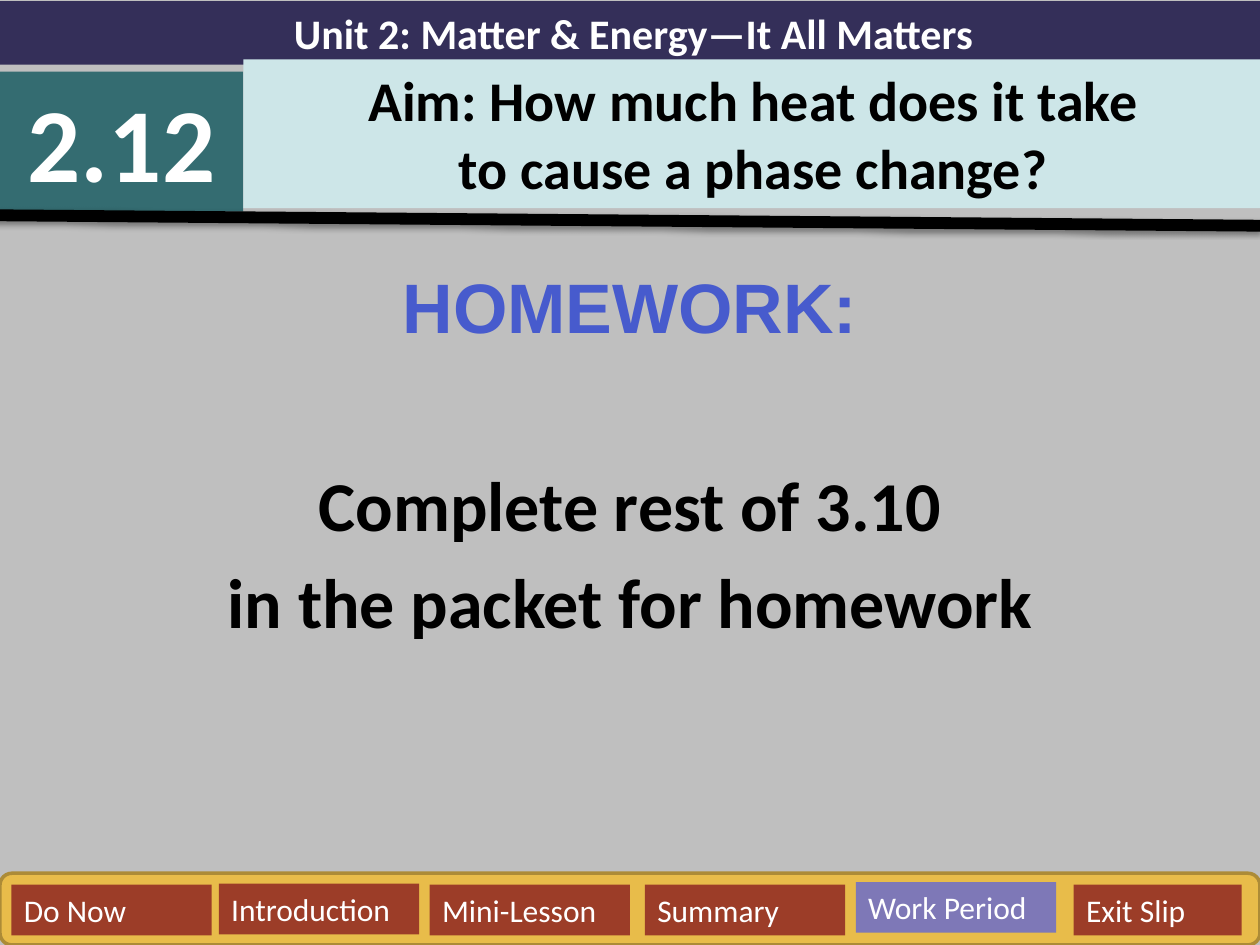
from pptx import Presentation
from pptx.dml.color import RGBColor
from pptx.enum.shapes import MSO_CONNECTOR as Connector, MSO_SHAPE as Shape
from pptx.enum.text import MSO_ANCHOR as Anchor, MSO_AUTO_SIZE as AutoSize, PP_ALIGN as Align
from pptx.oxml import parse_xml
from pptx.oxml.ns import nsdecls
from pptx.util import Pt


def color(hex_string):
    return RGBColor.from_string(hex_string)


class LessonSlide:
    """Holds the style and the current slide; every length is in points."""
    FONT = "Calibri"
    BLACK, WHITE = "000000", "FFFFFF"
    GRAY, PURPLE, TEAL, PALE = "BFBFBF", "342F59", "346C71", "CDE6E8"
    GOLD, GOLD_EDGE, RED, VIOLET, BLUE = "E8BC4A", "AC8B37", "9C3D28", "7E78B7", "475BCD"

    def __init__(self, presentation):
        self.slide = presentation.slides.add_slide(presentation.slide_layouts[0])
        self.shapes = self.slide.shapes
        self.paint(self.slide.background, self.GRAY)

    def paint(self, target, fill):
        target.fill.solid()
        target.fill.fore_color.rgb = color(fill)

    def place(self, shape, box):
        for name, value in zip(("left", "top", "width", "height"), box):
            setattr(shape, name, Pt(value))

    def set_text(self, shape, lines, size, ink, bold=True, align=Align.CENTER):
        frame = shape.text_frame
        frame.text = "\n".join(lines)
        frame_format = {"word_wrap": True, "auto_size": AutoSize.NONE,
                        "vertical_anchor": Anchor.TOP}
        for name, value in frame_format.items():
            setattr(frame, name, value)
        font_format = {"name": self.FONT, "size": Pt(size), "bold": bold}
        for paragraph in frame.paragraphs:
            paragraph.alignment = align
            for run in paragraph.runs:
                for name, value in font_format.items():
                    setattr(run.font, name, value)
                run.font.color.rgb = color(ink)
        return frame.paragraphs

    def panel(self, box, fill, kind=Shape.RECTANGLE, edge=None):
        shape = self.shapes.add_shape(kind, *map(Pt, box))
        shape.shadow.inherit = False
        self.paint(shape, fill)
        if edge:
            shape.line.color.rgb = color(edge)
            shape.line.width = Pt(2)
        else:
            shape.line.fill.background()
        return shape

    def title(self, box, lines):
        title = self.shapes.title
        self.place(title, box)
        self.paint(title, self.PALE)
        for paragraph in self.set_text(title, lines, 32, self.BLACK):
            paragraph.space_before = Pt(0)
        # The aim lies above the unit bar
        title.element.getparent().append(title.element)

    def homework(self, box, heading, lines):
        body = self.slide.placeholders[1]
        self.place(body, box)
        paragraphs = self.set_text(body, [heading, *lines], 40, self.BLACK)
        for paragraph, gap in zip(paragraphs, (3, 65, 7.5)):
            paragraph.space_before = Pt(gap)
        heading_font = paragraphs[0].runs[0].font
        heading_font.name = "Arial"
        heading_font.color.rgb = color(self.BLUE)

    def rule(self, start, end, width):
        line = self.shapes.add_connector(Connector.STRAIGHT, *map(Pt, (*start, *end)))
        line.line.color.rgb = color(self.BLACK)
        line.line.width = Pt(width)
        line.element.spPr.append(parse_xml(
            f'<a:effectLst {nsdecls("a")}><a:outerShdw blurRad="{Pt(3.1)}" dist="{Pt(1.6)}" '
            f'dir="5400000" rotWithShape="0"><a:srgbClr val="{self.BLACK}">'
            '<a:alpha val="38000"/></a:srgbClr></a:outerShdw></a:effectLst>'))

    def button(self, label, left, top, width, fill):
        shape = self.panel((left, top, width, 29), fill)
        self.set_text(shape, [label], 18, self.WHITE, bold=False, align=Align.LEFT)


def main():
    presentation = Presentation()
    presentation.slide_width, presentation.slide_height = Pt(720), Pt(540)
    lesson = LessonSlide(presentation)

    lesson.homework((0, 147, 720, 393), "HOMEWORK:",
                    ["Complete rest of 3.10", "in the packet for homework"])
    unit_bar = lesson.panel((0, 0.7, 724, 36.3), lesson.PURPLE)
    lesson.set_text(unit_bar, ["Unit 2: Matter & Energy—It All Matters"], 24, lesson.WHITE)
    number = lesson.panel((0, 41, 139, 80), lesson.TEAL)
    lesson.set_text(number, ["2.12"], 60, lesson.WHITE)
    lesson.title((139, 34, 583, 85),
                 ["Aim: How much heat does it take", "to cause a phase change?"])
    lesson.rule((-3.5, 123), (720, 129), 6.75)

    lesson.panel((0, 499, 720, 41), lesson.GOLD, Shape.ROUNDED_RECTANGLE, lesson.GOLD_EDGE)
    for label, left, top, width, fill in (
            ("Do Now", 6.5, 505.5, 114.5, lesson.RED),
            ("Introduction", 125, 505, 114.5, lesson.RED),
            ("Mini-Lesson", 245.5, 505.5, 114.5, lesson.RED),
            ("Summary", 368.5, 505.5, 114.5, lesson.RED),
            ("Work Period", 489, 504, 114.5, lesson.VIOLET),
            ("Exit Slip", 613.5, 505.5, 96, lesson.RED)):
        lesson.button(label, left, top, width, fill)

    presentation.save("out.pptx")


if __name__ == "__main__":
    main()
